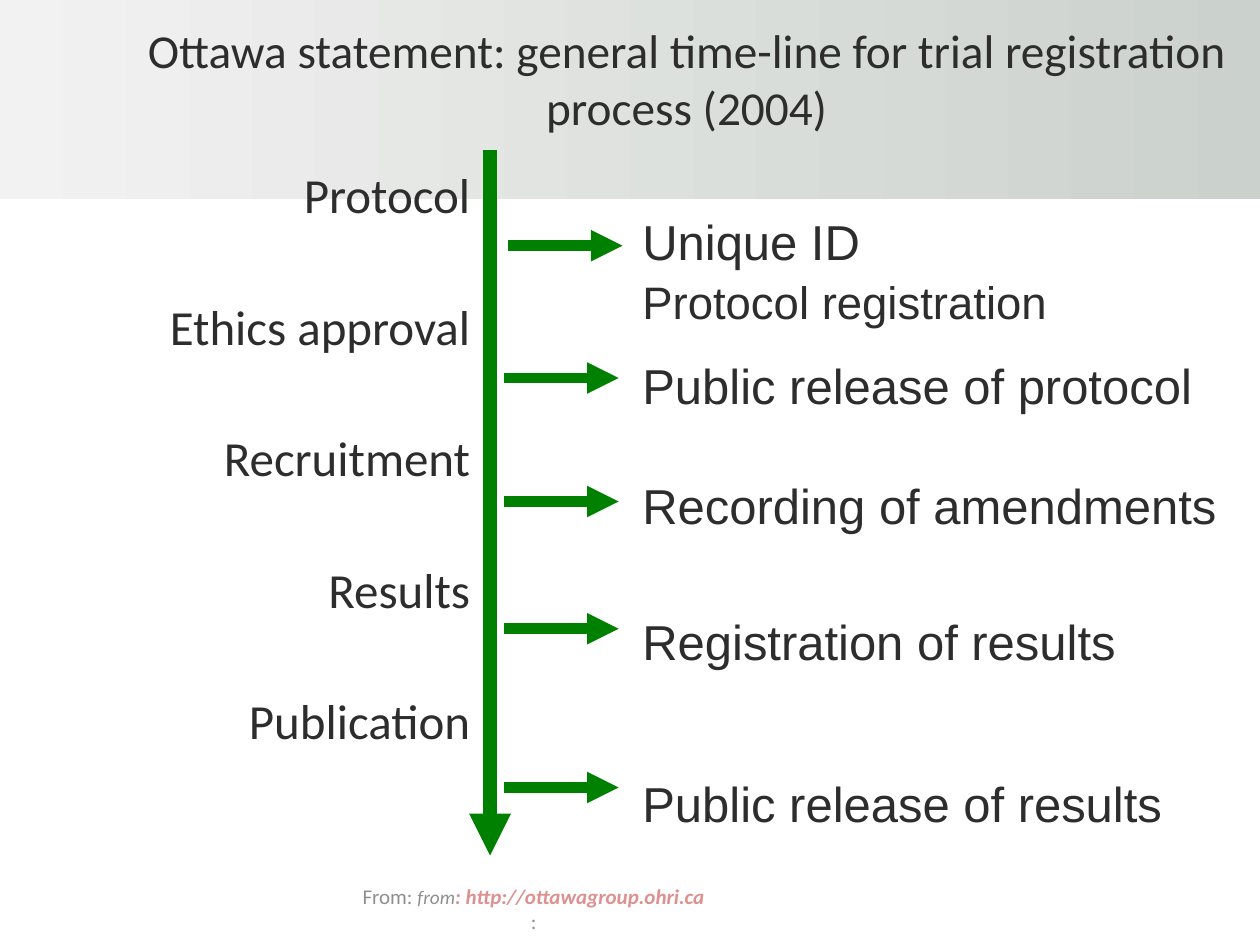
"""Build the trial registration time-line slide."""
import pptx
import pptx.dml.color
import pptx.enum.shapes
import pptx.enum.text
import pptx.oxml
import pptx.oxml.ns
import pptx.util

Inches = pptx.util.Inches
Pt = pptx.util.Pt
Align = pptx.enum.text.PP_ALIGN
Anchor = pptx.enum.text.MSO_ANCHOR
INK, GREEN, GREY, ROSE = "2D2D2D", "008000", "8F8F8F", "DC9190"


def color(code):
    """Turn a hex string into a colour."""
    return pptx.dml.color.RGBColor.from_string(code)


class Sketch:
    """Hold the style and the current slide."""

    def __init__(self, slide, ink=INK, line=GREEN):
        self.slide, self.ink, self.line = slide, ink, line

    def band(self, box, stops):
        """Draw a rectangle with a left-to-right gradient."""
        shape = self.slide.shapes.add_shape(
            pptx.enum.shapes.MSO_SHAPE.RECTANGLE, *map(Inches, box))
        shape.shadow.inherit = False
        shape.line.fill.background()
        shape.fill.gradient()
        shape.fill.gradient_angle = 0
        for stop, code in zip(shape.fill.gradient_stops, stops):
            stop.color.rgb = color(code)

    def text(self, box, paras, font, frame=None, para=None):
        """Add a text box of paragraphs, each a list of runs and a format."""
        shape = self.slide.shapes.add_textbox(*map(Inches, box))
        body = shape.text_frame
        for key, value in {"word_wrap": True, **(frame or {})}.items():
            setattr(body, key, value)
        for i, (runs, form) in enumerate(paras):
            item = body.add_paragraph() if i else body.paragraphs[0]
            for key, value in {**(para or {}), **form}.items():
                if i or key != "space_before":
                    setattr(item, key, value)
            for words, style in runs:
                run = item.add_run()
                run.text = words
                look = {**font, **style}
                run.font.color.rgb = color(look.pop("ink", self.ink))
                for key, value in look.items():
                    setattr(run.font, key, value)

    def arrow(self, start, end, width):
        """Draw a straight arrow."""
        link = self.slide.shapes.add_connector(
            pptx.enum.shapes.MSO_CONNECTOR.STRAIGHT, *map(Inches, start + end))
        link.line.color.rgb = color(self.line)
        link.line.width = Pt(width)
        stroke = link.line._get_or_add_ln()
        tail = pptx.oxml.ns.qn("a:tailEnd")
        stroke.append(stroke.makeelement(tail, {"type": "triangle"}))
        props = link._element.spPr
        props.append(props.makeelement(pptx.oxml.ns.qn("a:effectLst"), {}))


def main():
    """Build and save the slide."""
    deck = pptx.Presentation()
    deck.slide_width, deck.slide_height = Inches(10), Inches(7.5)
    page = Sketch(deck.slides.add_slide(deck.slide_layouts[6]))
    page.band((0, 0, 10, 1.58), ("F2F2F2", "CBD1CC"))

    title = "Ottawa statement: general time-line for trial registration process (2004)"
    page.text((0.9, 0.14, 9.1, 0.96), [([(title, {})], {})],
              {"name": "Calibri", "size": Pt(27)},
              {"vertical_anchor": Anchor.MIDDLE}, {"alignment": Align.CENTER})

    stages = ["Protocol", "Ethics approval", "Recruitment", "Results", "Publication"]
    page.text((0, 1.19, 3.83, 5.23), [([(name, {})], {}) for name in stages],
              {"name": "Calibri", "size": Pt(28)},
              para={"alignment": Align.RIGHT, "line_spacing": 1.15,
                    "space_before": Pt(36.5)})

    steps = [
        ("Unique ID", 28, 0),
        ("Protocol registration", 26, 2),
        ("Public release of protocol", 28, 15.5),
        ("Recording of amendments", 28, 35),
        ("Registration of results", 28, 44),
        ("Public release of results", 28, 59),
    ]
    page.text((5, 1.12, 5, 5.68),
              [([(name, {"size": Pt(size)})], {"space_before": Pt(gap)})
               for name, size, gap in steps],
              {"name": "Arial"}, {"margin_top": Inches(0.56)})

    page.arrow((3.89, 1.19), (3.89, 6.79), 8)
    for left, top in [(4.03, 1.95), (4, 3), (4, 3.98), (4, 4.99), (4, 6.25)]:
        page.arrow((left, top), (left + 0.91, top), 6)

    source = [("From: ", {}), ("from", {"size": Pt(11), "italic": True}),
              (": http://ottawagroup.ohri.ca",
               {"ink": ROSE, "bold": True, "italic": True})]
    page.text((2.65, 6.95, 3.17, 0.52), [(source, {}), ([(":", {})], {})],
              {"name": "Calibri", "size": Pt(12), "ink": GREY},
              {"vertical_anchor": Anchor.MIDDLE}, {"alignment": Align.CENTER})
    deck.save("out.pptx")


if __name__ == "__main__":
    main()
